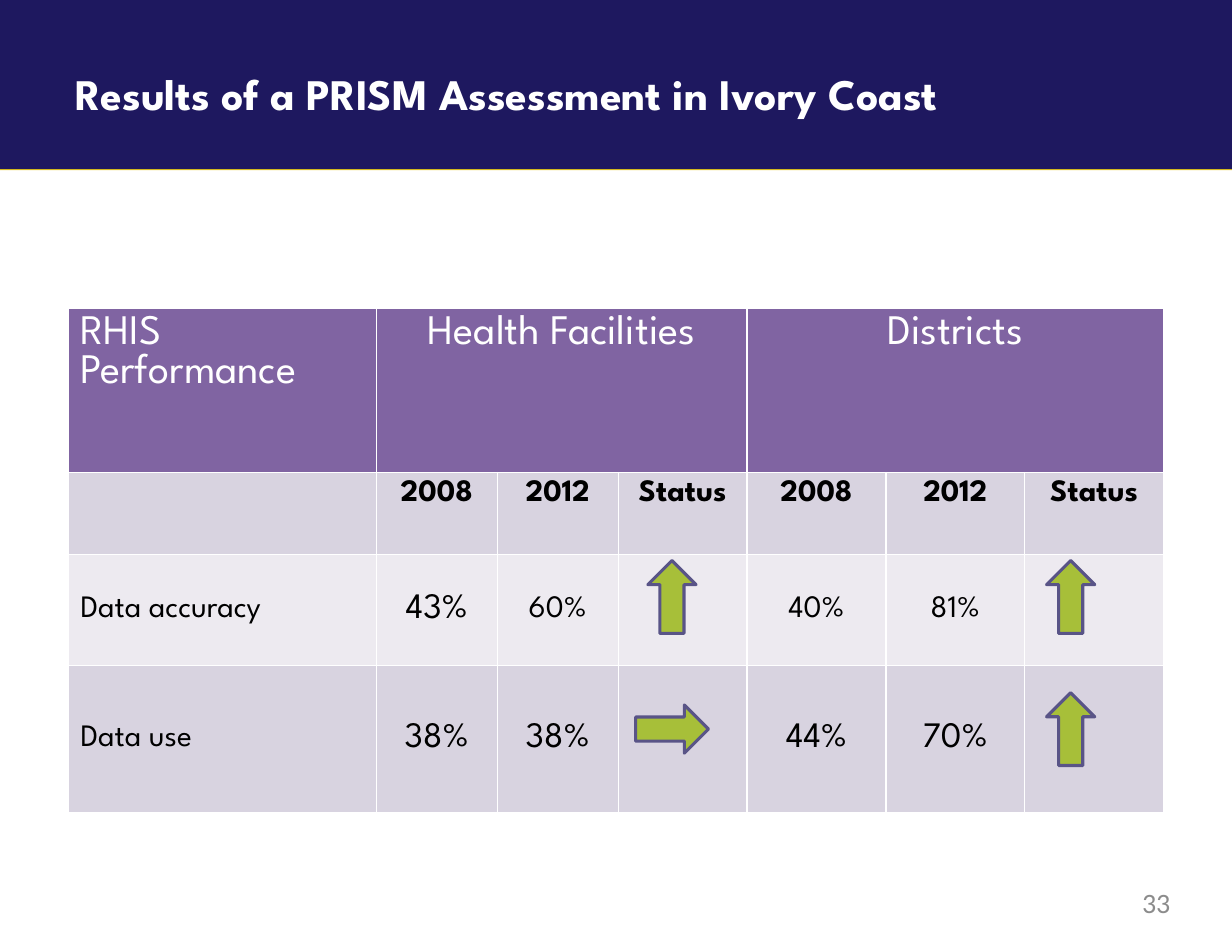
from lxml.etree import SubElement
from pptx import Presentation
from pptx.dml.color import RGBColor as Rgb
from pptx.enum.shapes import MSO_SHAPE as Shape
from pptx.enum.text import MSO_ANCHOR as Anchor, PP_ALIGN as Align
from pptx.oxml.ns import qn
from pptx.util import Inches, Pt

COLORS = {
    "navy": "1E185F", "gold": "ECCE18", "white": "FFFFFF", "black": "000000",
    "purple": "8064A2", "dark": "D8D3E0", "light": "EDEAF0",
    "green": "A7BF39", "edge": "595487", "gray": "8C8C8C",
}
FONT = "League Spartan"
TITLE = "Results of a PRISM Assessment in Ivory Coast"
PAGE = "33"

COLS = [2.75, 1.08, 1.08, 1.15, 1.24, 1.24, 1.24]
GROUPS = {1: 3, 4: 6}  # first and last column under each wide heading
ROWS = [  # height, fill, text format, cells
    (1.47, "purple", {"size": 27, "color": "white"},
     ["RHIS Performance", "Health Facilities", "", "", "Districts", "", ""]),
    (0.73, "dark", {"size": 20, "bold": True},
     ["", "2008", "2012", "Status", "2008", "2012", "Status"]),
    (0.99, "light", {"size": 20, "anchor": Anchor.MIDDLE},
     ["Data accuracy", "43%", "60%", "", "40%", "81%", ""]),
    (1.32, "dark", {"size": 23, "anchor": Anchor.MIDDLE},
     ["Data use", "38%", "38%", "", "44%", "70%", ""]),
]
SIZES = {"43%": 23, "Data use": 20}  # cells that differ from their row
ARROWS = [  # centre x, centre y, turn
    (6.0, 5.33, 0), (9.56, 5.33, 0), (9.56, 6.51, 0), (6.0, 6.51, 90),
]


def color(name):
    return Rgb.from_string(COLORS[name])


def paint(item, name):
    item.fill.solid()
    item.fill.fore_color.rgb = color(name)


def write(frame, text, size=20, color_name="black", bold=False,
          align=Align.LEFT, font=FONT, line=None):
    para = frame.paragraphs[0]
    para.alignment = align
    if line:
        para.line_spacing = Pt(line)
    run = para.add_run()
    run.text = text
    run.font.name, run.font.size, run.font.bold = font, Pt(size), bold
    run.font.color.rgb = color(color_name)


def clear(frame):
    """Remove the insets, wrap the text and hold it at the top."""
    frame.margin_left = frame.margin_right = 0
    frame.margin_top = frame.margin_bottom = 0
    frame.word_wrap = True
    frame.vertical_anchor = Anchor.TOP


def border(cell):
    props = cell._tc.get_or_add_tcPr()
    for side in ("lnL", "lnR", "lnT", "lnB"):
        line = SubElement(props, qn("a:" + side), w=str(Pt(1)))
        fill = SubElement(line, qn("a:solidFill"))
        SubElement(fill, qn("a:srgbClr"), val=COLORS["white"])


def add_band(slide, top, name):
    band = slide.shapes.add_shape(
        Shape.RECTANGLE, 0, Inches(top), Inches(11), Inches(1.52))
    band.shadow.inherit = False
    paint(band, name)
    band.line.fill.background()


def add_title(slide):
    title = slide.shapes.title
    title.left, title.top = Inches(0.67), Inches(0.47)
    title.width, title.height = Inches(9.53), Inches(1.04)
    clear(title.text_frame)
    write(title.text_frame, TITLE, size=28, color_name="white",
          bold=True, line=43)
    slide.shapes._spTree.append(title._element)  # in front of the bands


def add_results(slide):
    table = slide.shapes.add_table(
        len(ROWS), len(COLS), Inches(0.61), Inches(2.75),
        Inches(sum(COLS)), Inches(sum(row[0] for row in ROWS))).table
    for col, width in zip(table.columns, COLS):
        col.width = Inches(width)
    for r, (height, fill, form, texts) in enumerate(ROWS):
        table.rows[r].height = Inches(height)
        for c, text in enumerate(texts):
            cell = table.cell(r, c)
            cell.margin_left = cell.margin_right = Inches(0.11)
            cell.margin_top = cell.margin_bottom = Inches(0.06)
            cell.vertical_anchor = form.get("anchor", Anchor.TOP)
            border(cell)
            paint(cell, fill)
            if text:
                write(cell.text_frame, text,
                      size=SIZES.get(text, form["size"]),
                      color_name=form.get("color", "black"),
                      bold=form.get("bold", False),
                      align=Align.CENTER if c else Align.LEFT)
    for first, last in GROUPS.items():
        table.cell(0, first).merge(table.cell(0, last))


def add_arrow(slide, x, y, turn, width=0.43, height=0.65):
    arrow = slide.shapes.add_shape(
        Shape.UP_ARROW, Inches(x - width / 2), Inches(y - height / 2),
        Inches(width), Inches(height))
    arrow.rotation = turn
    arrow.shadow.inherit = False
    paint(arrow, "green")
    arrow.line.color.rgb = color("edge")
    arrow.line.width = Pt(2)


def add_page(slide):
    box = slide.shapes.add_textbox(
        Inches(7.92), Inches(7.91), Inches(2.53), Inches(0.42))
    clear(box.text_frame)
    write(box.text_frame, PAGE, size=18, color_name="gray",
          align=Align.RIGHT, font="Calibri")


def main():
    deck = Presentation()
    deck.slide_width, deck.slide_height = Inches(11), Inches(8.5)
    slide = deck.slides.add_slide(deck.slide_layouts[5])
    add_band(slide, 0, "gold")
    add_band(slide, -0.01, "navy")
    add_title(slide)
    add_results(slide)
    for x, y, turn in ARROWS:
        add_arrow(slide, x, y, turn)
    add_page(slide)
    deck.save("out.pptx")


if __name__ == "__main__":
    main()
